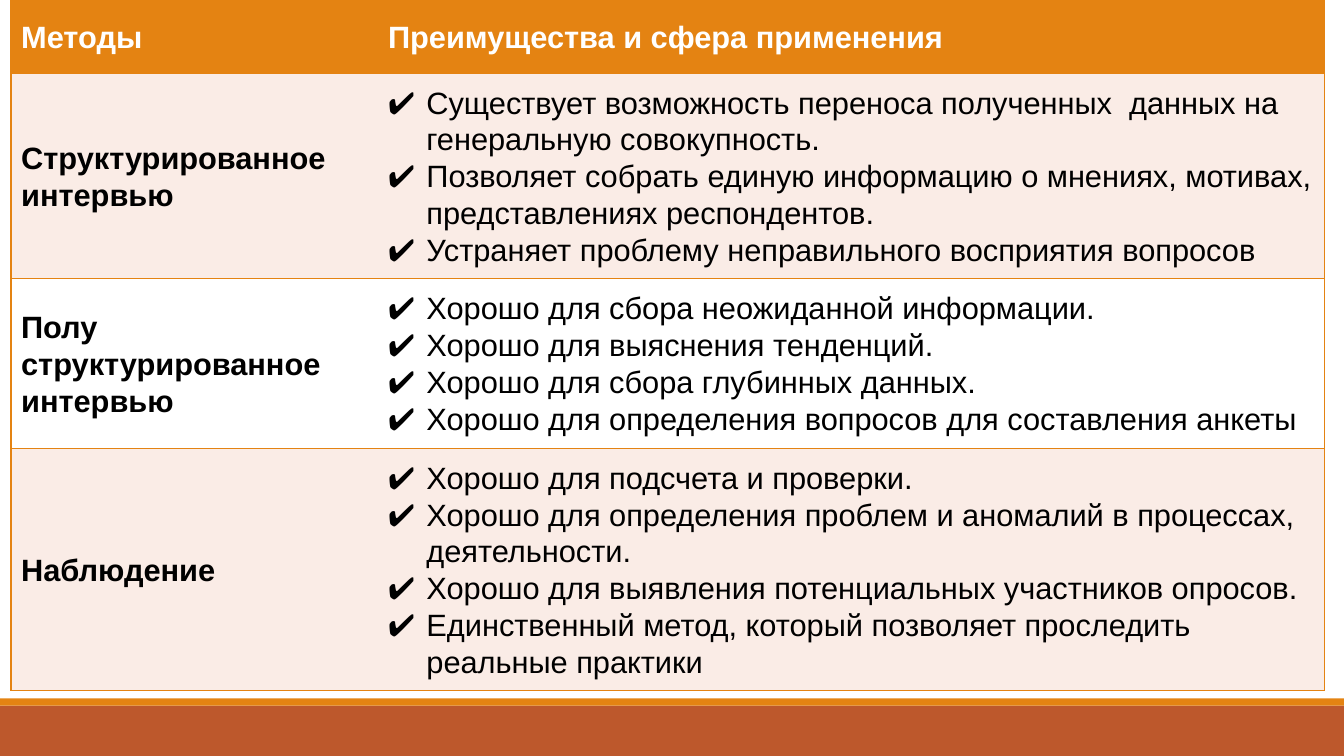
from lxml import etree
from pptx import Presentation
from pptx.dml.color import RGBColor
from pptx.enum import shapes, text
from pptx.oxml import ns
from pptx.util import Inches, Pt

HEADER = ("Методы", "Преимущества и сфера применения")
METHODS = [
    ("Структурированное интервью", [
        "Существует возможность переноса полученных  данных на генеральную совокупность.",
        "Позволяет собрать единую информацию о мнениях, мотивах, представлениях респондентов.",
        "Устраняет проблему неправильного восприятия вопросов",
    ]),
    ("Полу структурированное интервью", [
        "Хорошо для сбора неожиданной информации.",
        "Хорошо для выяснения тенденций.",
        "Хорошо для сбора глубинных данных.",
        "Хорошо для определения вопросов для составления анкеты",
    ]),
    ("Наблюдение", [
        "Хорошо для подсчета и проверки.",
        "Хорошо для определения проблем и аномалий в процессах, деятельности.",
        "Хорошо для выявления потенциальных участников опросов.",
        "Единственный метод, который позволяет проследить реальные практики",
    ]),
]
COLORS = {"orange": "E48312", "rust": "BD582C", "band": "FAECE6",
          "white": "FFFFFF", "black": "000000"}
COLUMN_WIDTHS = (3.64, 9.39)
ROW_HEIGHTS = (0.73, 2.03, 1.69, 2.4)
FOOTER_BARS = [("rust", 7, 0.5), ("orange", 6.93, 0.07)]
CELL_FORMAT = {"vertical_anchor": text.MSO_ANCHOR.MIDDLE,
               "margin_left": Inches(0.1), "margin_right": Inches(0.1),
               "margin_top": Inches(0.1), "margin_bottom": Inches(0.1)}


def rgb(name):
    return RGBColor.from_string(COLORS[name])


def add_bullet(paragraph):
    properties = paragraph._p.get_or_add_pPr()
    properties.set("marL", str(Inches(0.38)))
    properties.set("indent", str(-Inches(0.38)))
    color = etree.SubElement(properties, ns.qn("a:buClr"))
    etree.SubElement(color, ns.qn("a:srgbClr"), val=COLORS["black"])
    etree.SubElement(properties, ns.qn("a:buFont"), typeface="Arial")
    etree.SubElement(properties, ns.qn("a:buChar"), char="✔")


def set_borders(cell, visible_sides):
    properties = cell._tc.get_or_add_tcPr()
    for position, side in enumerate("LRTB"):
        line = etree.Element(ns.qn(f"a:ln{side}"), w=str(Pt(1)))
        if side in visible_sides:
            fill = etree.SubElement(line, ns.qn("a:solidFill"))
            etree.SubElement(fill, ns.qn("a:srgbClr"), val=COLORS["orange"])
        else:
            etree.SubElement(line, ns.qn("a:noFill"))
        properties.insert(position, line)


def fill_cell(cell, lines, fill, color, bold, bulleted):
    for name, value in CELL_FORMAT.items():
        setattr(cell, name, value)
    cell.fill.solid()
    cell.fill.fore_color.rgb = rgb(fill)
    font_format = {"name": "Arial", "size": Pt(22), "bold": bold}
    for index, line in enumerate(lines):
        frame = cell.text_frame
        paragraph = frame.add_paragraph() if index else frame.paragraphs[0]
        paragraph.line_spacing = 1.07
        if bulleted:
            add_bullet(paragraph)
        run = paragraph.add_run()
        run.text = line
        for name, value in font_format.items():
            setattr(run.font, name, value)
        run.font.color.rgb = rgb(color)


presentation = Presentation()
presentation.slide_width = Inches(13.33)
presentation.slide_height = Inches(7.5)
slide = presentation.slides.add_slide(presentation.slide_layouts[6])

# Footer bars
for color, top, height in FOOTER_BARS:
    bar = slide.shapes.add_shape(shapes.MSO_SHAPE.RECTANGLE, 0, Inches(top),
                                 presentation.slide_width, Inches(height))
    bar.shadow.inherit = False
    bar.fill.solid()
    bar.fill.fore_color.rgb = rgb(color)
    bar.line.fill.background()

# Table of methods
rows = [(HEADER[0], [HEADER[1]])] + METHODS
table = slide.shapes.add_table(
    len(rows), len(COLUMN_WIDTHS), Inches(0.11), 0,
    Inches(sum(COLUMN_WIDTHS)), Inches(sum(ROW_HEIGHTS))).table
for column, width in zip(table.columns, COLUMN_WIDTHS):
    column.width = Inches(width)
for row, height in zip(table.rows, ROW_HEIGHTS):
    row.height = Inches(height)

for index, (method, benefits) in enumerate(rows):
    is_header = index == 0
    fill = "orange" if is_header else "band" if index % 2 else "white"
    color = "white" if is_header else "black"
    method_cell, benefits_cell = table.cell(index, 0), table.cell(index, 1)
    fill_cell(method_cell, [method], fill, color, True, False)
    fill_cell(benefits_cell, benefits, fill, color, is_header, not is_header)
    set_borders(method_cell, "LTB")
    set_borders(benefits_cell, "RTB")

presentation.save("out.pptx")
